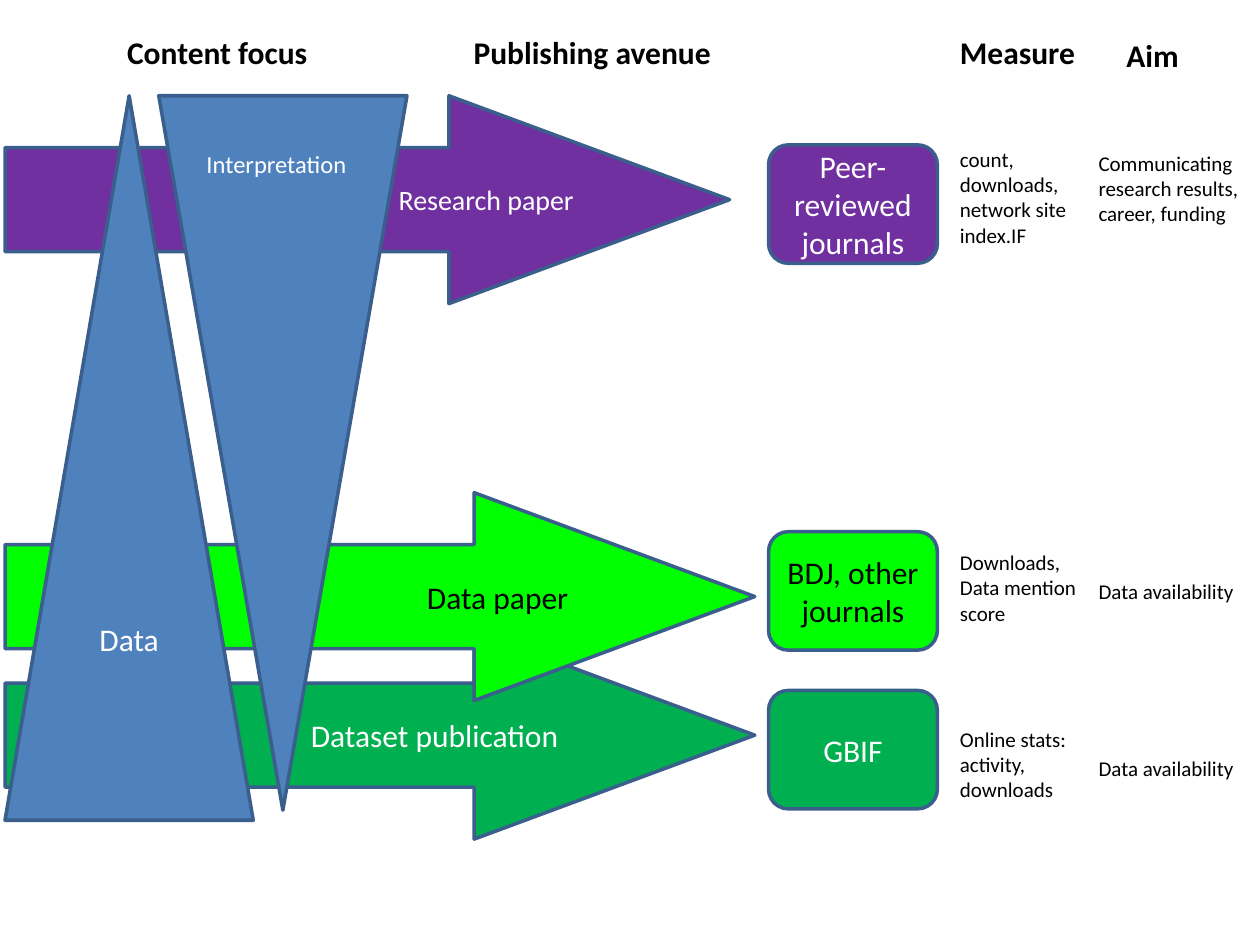
from dataclasses import dataclass

from pptx import Presentation
from pptx.dml.color import RGBColor
from pptx.enum.shapes import MSO_SHAPE
from pptx.enum.text import MSO_ANCHOR, MSO_AUTO_SIZE, PP_ALIGN
from pptx.util import Inches, Pt

COLORS = {
    "research": "7030A0",
    "data paper": "00FF00",
    "dataset": "00B050",
    "focus": "4F81BD",
    "outline": "3A5F8C",
    "light": "FFFFFF",
    "dark": "000000",
}
FONT = "Calibri"
ARROW_LEFT, ARROW_HEIGHT = 0.04, 1.65
VENUE_LEFT, VENUE_WIDTH, VENUE_HEIGHT = 6.1, 1.34, 0.94
FOCUS_TOP, FOCUS_WIDTH = 0.76, 1.97


@dataclass
class Avenue:
    label: str
    venue: str
    fill: str
    ink: str
    arrow_top: float
    arrow_width: float
    label_shift: float
    venue_top: float
    label_size: int = 18


@dataclass
class Line:
    text: str
    size: int = 12
    bold: bool = False
    color: str = "dark"
    gap: float = 0
    indent: float = 0


@dataclass
class TextBlock:
    left: float
    top: float
    width: float
    height: float
    lines: list[Line]


AVENUES = [
    Avenue("Dataset publication", "GBIF", "dataset", "light", 5.01, 5.95, 1.98, 5.48),
    Avenue("Data paper", "BDJ, other journals", "data paper", "dark", 3.91, 5.95, 2.98, 4.22),
    Avenue("Research paper", "Peer-reviewed journals", "research", "light", 0.76, 5.75, 3, 1.15, 16),
]

TEXT_BLOCKS = [
    TextBlock(1.54, 1.13, 1.42, 0.34, [Line("Interpretation", 14, color="light")]),
    TextBlock(7.52, 0.21, 1.38, 6.26, [
        Line("Measure", 18, True),
        Line("count, downloads, network site index.IF", gap=43.5),
        Line("Downloads,", gap=172.8),
        Line("Data mention score"),
        Line("Online stats:", gap=57.6),
        Line("activity, downloads"),
    ]),
    TextBlock(0.91, 0.21, 2.32, 0.4, [Line("Content focus", 18, True)]),
    TextBlock(3.66, 0.21, 2.32, 0.4, [Line("Publishing avenue", 18, True)]),
    TextBlock(8.62, 0.24, 1.38, 6.06, [
        Line("Aim", 18, True, indent=0.22),
        Line("Communicating research results,", gap=43.5),
        Line("career, funding"),
        Line("Data availability", gap=201.6),
        Line("Data availability", gap=86.4),
    ]),
]


def rgb(name: str) -> RGBColor:
    """Look up a named colour."""
    return RGBColor.from_string(COLORS[name])


def add_run(paragraph, text: str, size: int, ink: str, bold: bool = False) -> None:
    """Append a formatted run to a paragraph."""
    run = paragraph.add_run()
    run.text = text
    run.font.name = FONT
    run.font.size = Pt(size)
    run.font.bold = bold
    run.font.color.rgb = rgb(ink)


def add_figure(slide, kind, left: float, top: float, width: float, height: float,
               fill: str, label: str = "", ink: str = "light", size: int = 18,
               shift: float = 0):
    """Draw an outlined shape with a centred label."""
    figure = slide.shapes.add_shape(kind, Inches(left), Inches(top), Inches(width), Inches(height))
    figure.shadow.inherit = False
    figure.fill.solid()
    figure.fill.fore_color.rgb = rgb(fill)
    figure.line.color.rgb = rgb("outline")
    figure.line.width = Pt(2)
    if label:
        frame = figure.text_frame
        frame.word_wrap = True
        frame.vertical_anchor = MSO_ANCHOR.MIDDLE
        frame.margin_left = Inches(0.1 + shift)
        paragraph = frame.paragraphs[0]
        paragraph.alignment = PP_ALIGN.CENTER
        add_run(paragraph, label, size, ink)
    return figure


def add_arrow(slide, avenue: Avenue) -> None:
    """Draw the arrow of a publishing avenue."""
    arrow = add_figure(slide, MSO_SHAPE.RIGHT_ARROW, ARROW_LEFT, avenue.arrow_top,
                       avenue.arrow_width, ARROW_HEIGHT, avenue.fill, avenue.label,
                       avenue.ink, avenue.label_size, avenue.label_shift)
    arrow.adjustments[1] = 1.35


def add_venue(slide, avenue: Avenue) -> None:
    """Draw the box naming where an avenue publishes."""
    add_figure(slide, MSO_SHAPE.ROUNDED_RECTANGLE, VENUE_LEFT, avenue.venue_top,
               VENUE_WIDTH, VENUE_HEIGHT, avenue.fill, avenue.venue, avenue.ink)


def add_text_block(slide, block: TextBlock) -> None:
    """Write a block of lines separated by paragraph spacing."""
    box = slide.shapes.add_textbox(Inches(block.left), Inches(block.top),
                                   Inches(block.width), Inches(block.height))
    frame = box.text_frame
    frame.word_wrap = True
    frame.auto_size = MSO_AUTO_SIZE.SHAPE_TO_FIT_TEXT
    for index, line in enumerate(block.lines):
        paragraph = frame.add_paragraph() if index else frame.paragraphs[0]
        if line.gap:
            paragraph.space_before = Pt(line.gap)
        if line.indent:
            paragraph._p.get_or_add_pPr().set("marL", str(Inches(line.indent)))
        add_run(paragraph, line.text, line.size, line.color, line.bold)


def main() -> None:
    """Build the slide and save it."""
    deck = Presentation()
    deck.slide_width, deck.slide_height = Inches(10), Inches(7.5)
    slide = deck.slides.add_slide(deck.slide_layouts[6])
    for avenue in AVENUES:
        add_arrow(slide, avenue)
    add_figure(slide, MSO_SHAPE.ISOSCELES_TRIANGLE, ARROW_LEFT, FOCUS_TOP,
               FOCUS_WIDTH, 5.75, "focus", "Data")
    interpretation = add_figure(slide, MSO_SHAPE.ISOSCELES_TRIANGLE, 1.26, FOCUS_TOP,
                                FOCUS_WIDTH, 5.67, "focus")
    interpretation.rotation = 180
    for avenue in AVENUES:
        add_venue(slide, avenue)
    for block in TEXT_BLOCKS:
        add_text_block(slide, block)
    deck.save("out.pptx")


if __name__ == "__main__":
    main()
